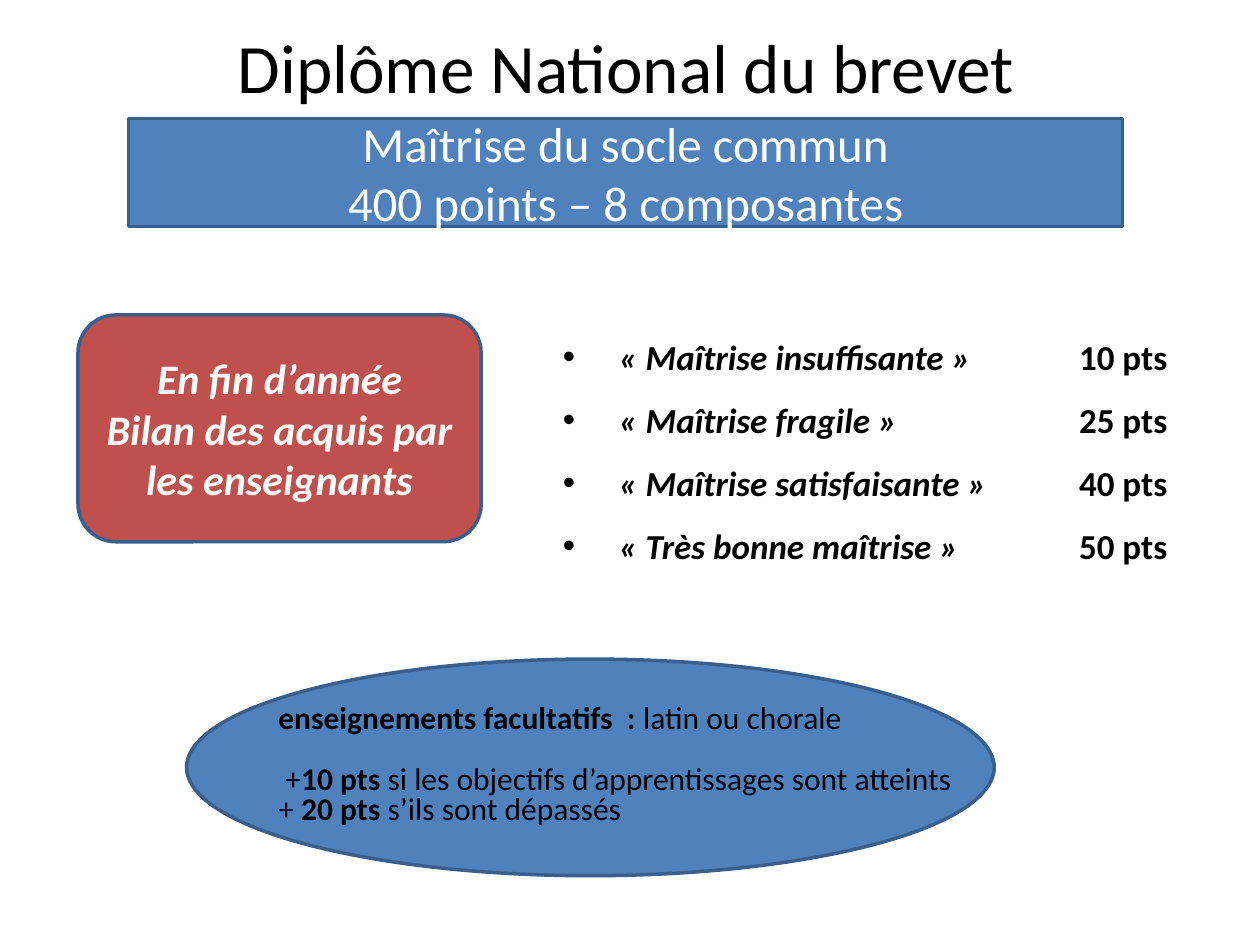
from dataclasses import dataclass

from lxml.etree import SubElement
from pptx import Presentation
from pptx.dml.color import RGBColor
from pptx.enum.shapes import MSO_SHAPE
from pptx.enum.text import MSO_ANCHOR, PP_ALIGN
from pptx.oxml.ns import qn
from pptx.util import Pt


@dataclass(frozen=True)
class Theme:
    font: str = "Calibri"
    blue: str = "4F81BD"
    red: str = "C0504D"
    edge: str = "3A5F8C"
    dark: str = "000000"
    light: str = "FFFFFF"
    title: float = 39.6
    band: float = 28
    card: float = 24
    list: float = 20
    note: float = 18


THEME = Theme()


def style(item, form):
    for key, value in form.items():
        setattr(item, key, value)


def draw(slide, kind, box, fill):
    shape = slide.shapes.add_shape(kind, *map(Pt, box))
    shape.shadow.inherit = False
    shape.fill.solid()
    shape.fill.fore_color.rgb = RGBColor.from_string(fill)
    shape.line.color.rgb = RGBColor.from_string(THEME.edge)
    shape.line.width = Pt(2)
    return shape


def write(shape, lines, size, color, para=None, frame=None):
    """Each line is a list of (text, font format) runs."""
    text = shape.text_frame
    style(text, {"word_wrap": True, **(frame or {})})
    for i, line in enumerate(lines):
        par = text.paragraphs[0] if i == 0 else text.add_paragraph()
        style(par, para or {"alignment": PP_ALIGN.CENTER})
        for words, form in line:
            run = par.add_run()
            run.text = words
            style(run.font, {"name": THEME.font, "size": Pt(size), **form})
            run.font.color.rgb = RGBColor.from_string(color)
    return text.paragraphs


def label(slide, box):
    return slide.shapes.add_textbox(*map(Pt, box))


MID = {"vertical_anchor": MSO_ANCHOR.MIDDLE}
BOLD = {"bold": True}
SLANT = {"bold": True, "italic": True}


# Title
def title(slide, box):
    write(label(slide, box), [[("Diplôme National du brevet", {})]],
          THEME.title, THEME.dark, frame=MID)


# Blue heading band
def band(slide, box):
    lines = ["Maîtrise du socle commun", "400 points – 8 composantes"]
    write(draw(slide, MSO_SHAPE.RECTANGLE, box, THEME.blue),
          [[(line, {})] for line in lines], THEME.band, THEME.light, frame=MID)


# Red card
def card(slide, box):
    lines = ["En fin d’année", "Bilan des acquis par les enseignants"]
    write(draw(slide, MSO_SHAPE.ROUNDED_RECTANGLE, box, THEME.red),
          [[(line, SLANT)] for line in lines], THEME.card, THEME.light, frame=MID)


# Levels with their points, in two tabbed columns
def levels(slide, box):
    rows = [("insuffisante", 10), ("fragile", 25), ("satisfaisante", 40)]
    names = [(f"Maîtrise {name}", pts) for name, pts in rows]
    names.append(("Très bonne maîtrise", 50))
    lines = [[(f"\t«\u00a0{name}\u00a0»\t", SLANT), (f"{pts} pts", BOLD)]
             for name, pts in names]
    pars = write(label(slide, box), lines, THEME.list, THEME.dark,
                 {"alignment": PP_ALIGN.LEFT, "line_spacing": 1.5},
                 {"margin_top": Pt(28)})
    for par in pars:
        props = par._p.get_or_add_pPr()
        props.set("marL", "0")
        props.set("indent", "0")
        SubElement(props, qn("a:buFont"), typeface="Arial")
        SubElement(props, qn("a:buChar"), char="•")
        tabs = SubElement(props, qn("a:tabLst"))
        for stop in (32, 295):
            SubElement(tabs, qn("a:tab"), pos=str(Pt(stop)), algn="l")


# Ellipse with the optional subjects
def extra(slide, box):
    left, top, width, height = box
    draw(slide, MSO_SHAPE.OVAL, box, THEME.blue)
    lines = [
        [("enseignements facultatifs  : ", BOLD), ("latin ou chorale", {})],
        [(" +", {}), ("10 pts", BOLD),
         (" si les objectifs d’apprentissages sont atteints", {})],
        [("+ ", {}), ("20 pts", BOLD), (" s’ils sont dépassés", {})],
    ]
    pars = write(label(slide, (left + 45.4, top + 23, 422, 77)), lines,
                 THEME.note, THEME.dark,
                 {"alignment": PP_ALIGN.LEFT, "line_spacing": 0.8})
    pars[0].space_after = Pt(17.5)


def main():
    deck = Presentation()
    style(deck, {"slide_width": Pt(720), "slide_height": Pt(540)})
    slide = deck.slides.add_slide(deck.slide_layouts[6])
    extra(slide, (106.6, 376.6, 461.5, 123.8))
    title(slide, (33.8, 11.5, 648, 51.8))
    band(slide, (73.4, 67.7, 568.1, 61.9))
    levels(slide, (314.6, 151.9, 360, 192.2))
    card(slide, (44.6, 180, 230.4, 129.6))
    deck.save("out.pptx")


if __name__ == "__main__":
    main()
